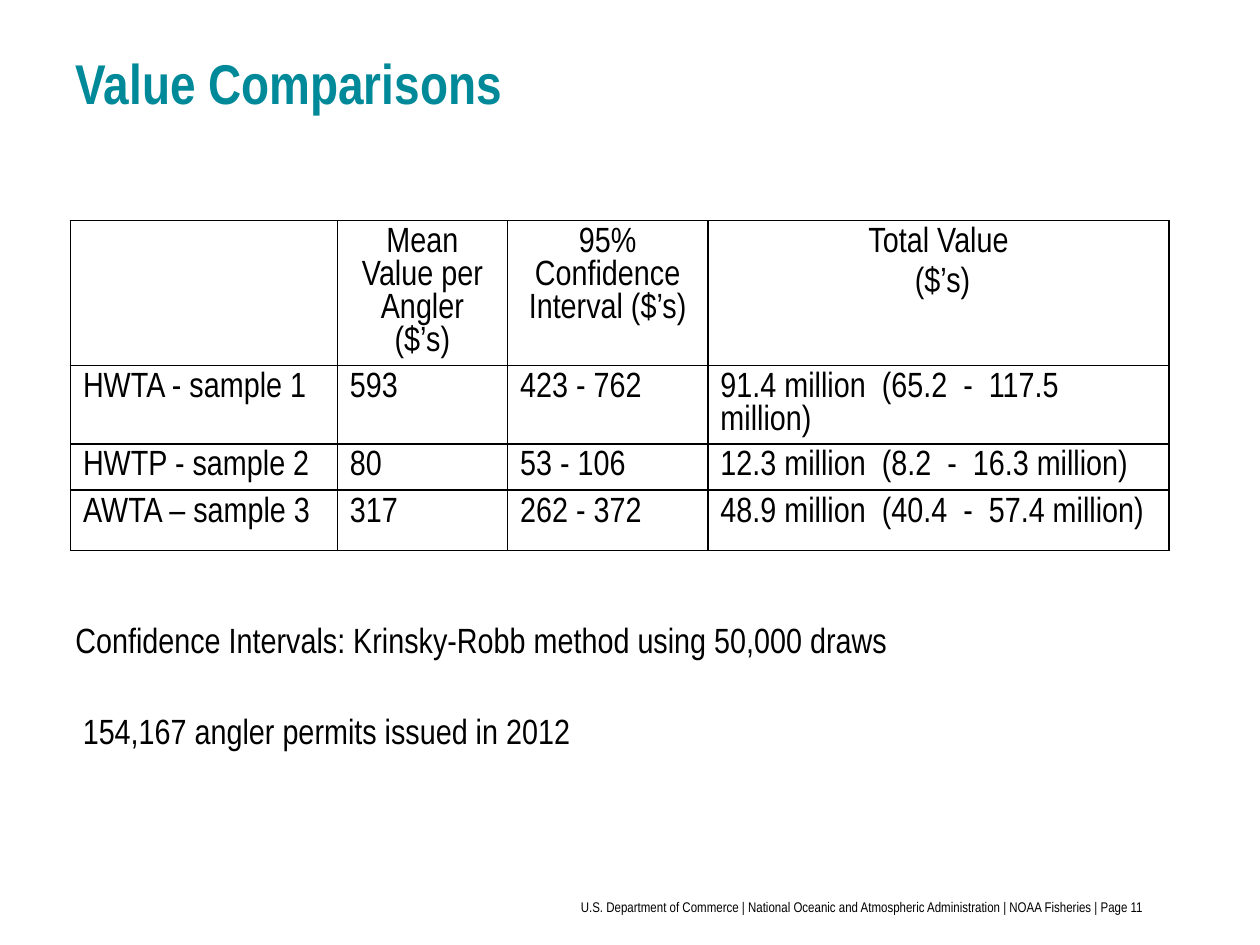
"""Build the Value Comparisons slide with its table of angler values."""
from lxml import etree
from pptx import Presentation
from pptx import util as u
from pptx.dml.color import RGBColor
from pptx.enum import text
from pptx.oxml.ns import qn

TEAL = RGBColor(0x00, 0x89, 0x98)
BLACK = RGBColor(0x00, 0x00, 0x00)
FONT = "Arial Narrow"

TITLE = "Value Comparisons"
HEADINGS = [[], ["Mean Value per Angler ($’s)"], ["95% Confidence Interval ($’s)"], ["Total Value", " ($’s)"]]
SAMPLES = [
    ["HWTA - sample 1", "593", "423 - 762", "91.4 million  (65.2  -  117.5 million)"],
    ["HWTP - sample 2", "80", "53 - 106", "12.3 million  (8.2  -  16.3 million)"],
    ["AWTA – sample 3", "317", "262 - 372", "48.9 million  (40.4  -  57.4 million)"],
]
COLUMN_WIDTHS = [5.38, 3.43, 4.04, 9.3]
ROW_HEIGHTS = [2.91, 1.58, 0.93, 1.22]
FOOTER = " | ".join([
    "U.S. Department of Commerce",
    "National Oceanic and Atmospheric Administration",
    "NOAA Fisheries",
    "Page 11",
])
NOTES = [
    ("Confidence Intervals: Krinsky-Robb method using 50,000 draws", (1.27, 12.34, 23.55, 1.12), 20, True),
    ("154,167 angler permits issued in 2012", (1.42, 14.17, 10.41, 1.12), 20, False),
    (FOOTER, (11.46, 17.98, 12.67, 1.07), 8, True),
]


def write(frame, lines, size, color=BLACK, bold=False, align=text.PP_ALIGN.LEFT):
    for index, line in enumerate(lines):
        paragraph = frame.add_paragraph() if index else frame.paragraphs[0]
        paragraph.text = line
        paragraph.alignment = align
        if index:
            paragraph.space_before = u.Pt(size * 0.2)
        font = paragraph.font
        font.name, font.size, font.bold = FONT, u.Pt(size), bold
        font.color.rgb = color


def outline(cell):
    properties = cell._tc.get_or_add_tcPr()
    for position, side in enumerate(("a:lnL", "a:lnR", "a:lnT", "a:lnB")):
        border = etree.Element(qn(side), w=str(u.Pt(1)))
        fill = etree.SubElement(border, qn("a:solidFill"))
        etree.SubElement(fill, qn("a:srgbClr"), val=str(BLACK))
        properties.insert(position, border)


def add_values(slide):
    rows = [HEADINGS] + [[[value] for value in sample] for sample in SAMPLES]
    values = slide.shapes.add_table(
        len(rows), len(COLUMN_WIDTHS), u.Cm(1.42), u.Cm(4.45),
        u.Cm(sum(COLUMN_WIDTHS)), u.Cm(sum(ROW_HEIGHTS))).table
    values.horz_banding = False
    values.first_row = False
    for column, width in zip(values.columns, COLUMN_WIDTHS):
        column.width = u.Cm(width)
    for row, height, contents in zip(values.rows, ROW_HEIGHTS, rows):
        row.height = u.Cm(height)
        align = text.PP_ALIGN.CENTER if contents is HEADINGS else text.PP_ALIGN.LEFT
        for cell, lines in zip(row.cells, contents):
            cell.fill.background()
            outline(cell)
            write(cell.text_frame, lines, 20, align=align)


def main():
    deck = Presentation()
    deck.slide_width, deck.slide_height = u.Cm(25.4), u.Cm(19.05)
    slide = deck.slides.add_slide(deck.slide_layouts[5])

    title = slide.shapes.title
    title.left, title.top, title.width, title.height = map(u.Cm, (1.27, 0.76, 22.86, 1.8))
    title.text_frame.vertical_anchor = text.MSO_ANCHOR.MIDDLE
    write(title.text_frame, [TITLE], 32, TEAL, True)

    add_values(slide)

    for note, place, size, wraps in NOTES:
        frame = slide.shapes.add_textbox(*map(u.Cm, place)).text_frame
        frame.word_wrap = wraps
        write(frame, [note], size)

    deck.save("out.pptx")


if __name__ == "__main__":
    main()
